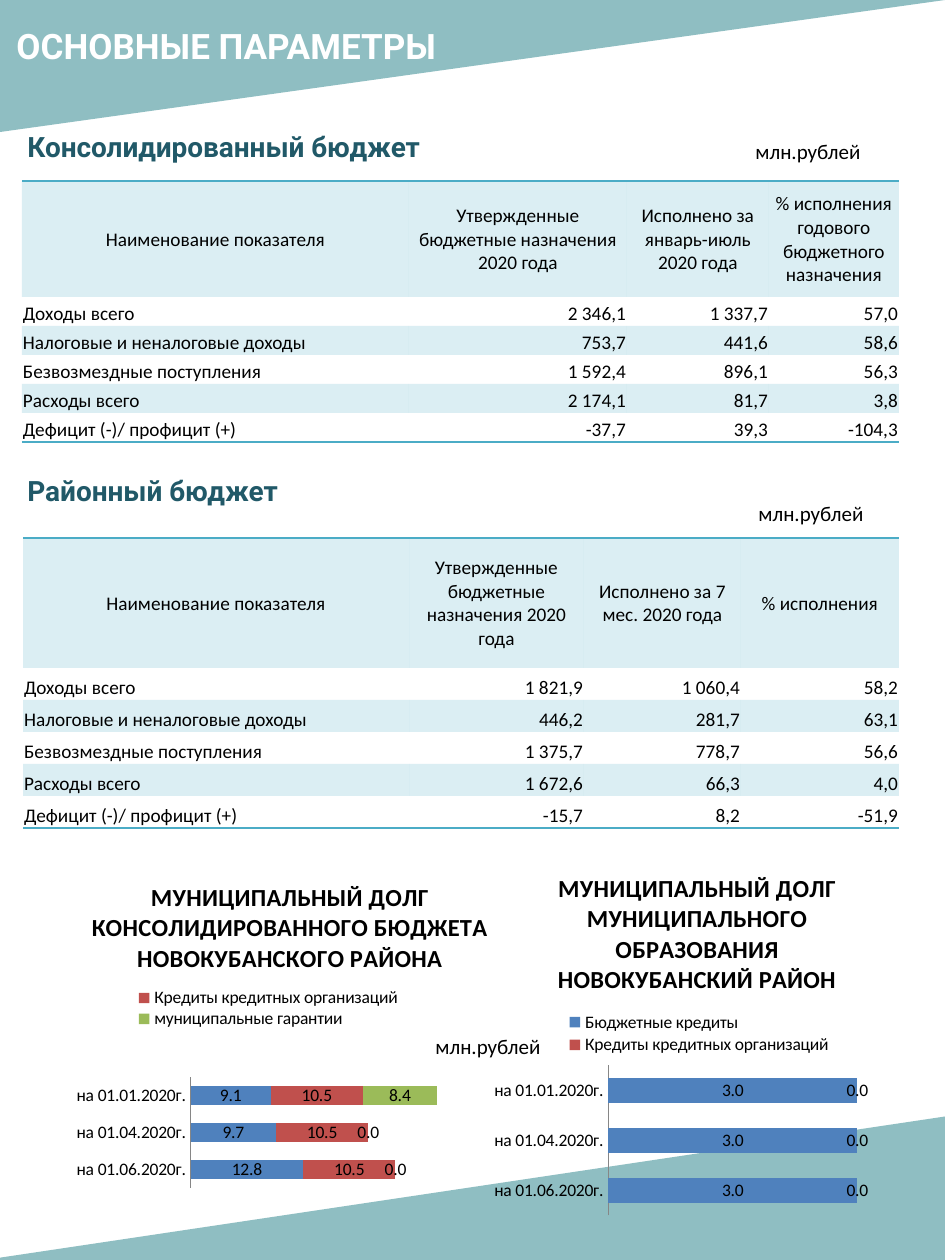
from dataclasses import dataclass

from lxml import etree
from pptx import Presentation, util as u
from pptx.chart.data import CategoryChartData
from pptx.dml.color import RGBColor
from pptx.enum import chart as charts, shapes, text
from pptx.oxml import parse_xml
from pptx.oxml.ns import nsdecls, qn


@dataclass(frozen=True)
class Theme:
    """Colours, fonts and type sizes of the slide."""
    band: str = "519AA0"
    table: str = "4BACC6"
    heading: str = "215968"
    white: str = "FFFFFF"
    black: str = "000000"
    axis: str = "868686"
    series: tuple = ("4F81BD", "C0504D", "9BBB59")
    display: str = "Roboto"
    body: str = "Calibri"
    title_size: int = 20
    heading_size: int = 16
    chart_title_size: int = 14
    unit_size: int = 12
    table_size: int = 11
    chart_size: int = 10


THEME = Theme()
ROW_NAMES = ["Доходы всего", "Налоговые и неналоговые доходы", "Безвозмездные поступления",
             "Расходы всего", "Дефицит (-)/ профицит (+)"]
DATES = ["на 01.01.2020г.", "на 01.04.2020г.", "на 01.06.2020г."]
NUMBER_FORMAT = "#,##0.0"
NO_STYLE = "{2D5ABB26-0587-4C30-8999-92F81FD0307C}"


def px(length):
    """Turn slide pixels into EMU."""
    return u.Emu(round(length * 914400 / 126))


def set_font(font, size, color=THEME.black, name=THEME.body, bold=False):
    """Set the face, size, colour and weight of a font."""
    font.name, font.size, font.bold = name, u.Pt(size), bold
    font.color.rgb = RGBColor.from_string(color)


def fill_clear(fill, color, percent):
    """Fill with a colour at the given opacity."""
    fill.solid()
    fill.fore_color.rgb = RGBColor.from_string(color)


def set_alpha(element, percent):
    """Make the first solid colour inside an element translucent."""
    color = next(element.iter(qn("a:srgbClr")))
    etree.SubElement(color, qn("a:alpha")).set("val", str(percent * 1000))


def add_band(page, box, flip):
    """Add a translucent triangular band."""
    band = page.shapes.add_shape(shapes.MSO_SHAPE.RIGHT_TRIANGLE, *map(px, box))
    band.shadow.inherit = False
    band.rotation = 180
    band.element.spPr.xfrm.set(flip, "1")
    fill_clear(band.fill, THEME.band, 64)
    set_alpha(band.element.spPr, 64)
    band.line.fill.background()


def add_label(page, box, words, size, wrap=True, **style):
    """Add one line of text that sizes its box."""
    label = page.shapes.add_textbox(*map(px, box))
    frame = label.text_frame
    frame.word_wrap = wrap
    frame.auto_size = text.MSO_AUTO_SIZE.SHAPE_TO_FIT_TEXT
    para = frame.paragraphs[0]
    para.text = words
    set_font(para.font, size, **style)


def add_border(cell, side):
    """Draw a one-point rule on one side of a table cell."""
    cell.fill._xPr.insert(0, parse_xml(
        f'<a:{side} {nsdecls("a")} w="12700"><a:solidFill><a:srgbClr val="{THEME.table}"/>'
        f'</a:solidFill></a:{side}>'))


def style_cell(cell, words, row, column, last):
    """Write and format one table cell according to its place."""
    cell.text = words
    cell.margin_left = cell.margin_top = cell.margin_right = px(1)
    cell.margin_bottom = 0
    cell.vertical_anchor = text.MSO_ANCHOR.BOTTOM if row else text.MSO_ANCHOR.MIDDLE
    align = text.PP_ALIGN.CENTER
    if row:
        align = text.PP_ALIGN.RIGHT if column else text.PP_ALIGN.LEFT
    for para in cell.text_frame.paragraphs:
        para.alignment = align
        set_font(para.font, THEME.table_size)
    if row % 2 == 0:
        fill_clear(cell.fill, THEME.table, 20)
        set_alpha(cell.fill._xPr, 20)
    else:
        cell.fill.background()
    if row == 0:
        add_border(cell, "lnT")
    if row == last:
        add_border(cell, "lnB")


def add_budget(page, box, widths, heights, headers, values):
    """Add a budget table with a header row and banded rows."""
    rows = [["Наименование показателя", *headers]]
    rows += [[name, *line] for name, line in zip(ROW_NAMES, values)]
    frame = page.shapes.add_table(len(rows), len(widths), *map(px, box))
    next(frame.element.iter(qn("a:tableStyleId"))).text = NO_STYLE
    table = frame.table
    table.first_row = table.horz_banding = False
    for column, width in zip(table.columns, widths):
        column.width = px(width)
    for i, line in enumerate(rows):
        table.rows[i].height = px(heights[min(i, 1)])
        for j, words in enumerate(line):
            style_cell(table.cell(i, j), words, i, j, len(rows) - 1)


def place_part(part, fractions, inner=False):
    """Place a chart part by fractions of the chart's size."""
    for old in part.findall(qn("c:layout")):
        part.remove(old)
    target = '<c:layoutTarget val="inner"/>' if inner else ""
    modes = '<c:xMode val="edge"/><c:yMode val="edge"/>'
    sizes = "".join(f'<c:{key} val="{value}"/>' for key, value in zip("xywh", fractions))
    layout = parse_xml(f'<c:layout {nsdecls("c")}><c:manualLayout>{target}{modes}{sizes}'
                       '</c:manualLayout></c:layout>')
    overlay = part.find(qn("c:overlay"))
    if overlay is None:
        part.insert(0, layout)
    else:
        overlay.addprevious(layout)


def add_debt(page, box, title, series, maximum, title_at, legend_at, plot_at):
    """Add a stacked bar chart of municipal debt."""
    data = CategoryChartData(number_format=NUMBER_FORMAT)
    data.categories = DATES
    for name, values in series:
        data.add_series(name, values)
    chart = page.shapes.add_chart(charts.XL_CHART_TYPE.BAR_STACKED, *map(px, box), data).chart
    set_font(chart.font, THEME.chart_size)
    chart.has_title = True
    para = chart.chart_title.text_frame.paragraphs[0]
    para.text = title
    set_font(para.font, THEME.chart_title_size, bold=True)
    chart.has_legend = True
    chart.legend.position = charts.XL_LEGEND_POSITION.TOP
    chart.legend.include_in_layout = False
    axis = chart.category_axis
    axis.reverse_order = True
    axis.major_tick_mark = charts.XL_TICK_MARK.NONE
    axis.format.line.color.rgb = RGBColor.from_string(THEME.axis)
    scale = chart.value_axis
    scale.visible = scale.has_major_gridlines = False
    scale.minimum_scale, scale.maximum_scale = 0, maximum
    plot = chart.plots[0]
    plot.gap_width, plot.overlap, plot.vary_by_categories = 95, 100, False
    for bars, color in zip(plot.series, THEME.series):
        bars.format.fill.solid()
        bars.format.fill.fore_color.rgb = RGBColor.from_string(color)
        labels = bars.data_labels
        labels.show_value = True
        labels.number_format, labels.number_format_is_linked = NUMBER_FORMAT, False
        set_font(labels.font, THEME.chart_size)
    root = chart.element
    legend = next(root.iter(qn("c:legend")))
    for index in range(2, len(series)):
        legend.find(qn("c:legendPos")).addnext(parse_xml(
            f'<c:legendEntry {nsdecls("c")}><c:idx val="{index}"/><c:delete val="1"/></c:legendEntry>'))
    place_part(next(root.iter(qn("c:title"))), title_at)
    place_part(legend, legend_at)
    place_part(next(root.iter(qn("c:plotArea"))), plot_at, inner=True)


def main():
    """Build the slide and save it."""
    deck = Presentation()
    deck.slide_width, deck.slide_height = px(945), px(1260)
    page = deck.slides.add_slide(deck.slide_layouts[6])
    add_band(page, (0, 0, 945, 132), "flipH")
    add_band(page, (-16, 1116, 964, 144), "flipV")
    add_label(page, (4, 18, 614, 55), "ОСНОВНЫЕ ПАРАМЕТРЫ", THEME.title_size,
              color=THEME.white, name=THEME.display, bold=True)
    for top, words in ((123, "Консолидированный бюджет"), (467, "Районный бюджет")):
        add_label(page, (15, top, 614, 47), words, THEME.heading_size,
                  color=THEME.heading, name=THEME.display, bold=True)
    add_budget(page, (22, 181, 877, 261), (387, 218, 142, 130), (116, 29),
               ["Утвержденные бюджетные назначения\n2020 года", "Исполнено за январь-июль\n2020 года",
                "% исполнения годового бюджетного назначения"],
               [("2 346,1", "1 337,7", "57,0"), ("753,7", "441,6", "58,6"),
                ("1 592,4", "896,1", "56,3"), ("2 174,1", "81,7", "3,8"), ("-37,7", "39,3", "-104,3")])
    add_budget(page, (23, 538, 876, 290), (386, 175, 157, 158), (130, 32),
               ["Утвержденные бюджетные назначения 2020 года", "Исполнено за 7\nмес. 2020 года",
                "% исполнения"],
               [("1 821,9", "1 060,4", "58,2"), ("446,2", "281,7", "63,1"),
                ("1 375,7", "778,7", "56,6"), ("1 672,6", "66,3", "4,0"), ("-15,7", "8,2", "-51,9")])
    for left, top in ((743, 132), (746, 494), (423, 1027)):
        add_label(page, (left, top, 135, 38), "млн.рублей", THEME.unit_size, wrap=False)
    budget, bank = "Бюджетные кредиты", "Кредиты кредитных организаций"
    add_debt(page, (15, 847, 517, 359),
             "МУНИЦИПАЛЬНЫЙ ДОЛГ КОНСОЛИДИРОВАННОГО БЮДЖЕТА НОВОКУБАНСКОГО РАЙОНА",
             [(budget, (9.1, 9.7, 12.8)), (bank, (10.5, 10.5, 10.5)),
              ("муниципальные гарантии", (8.4, 0, 0))],
             30, (0.14, 0.08), (0.22, 0.39, 0.54, 0.12), (0.34, 0.64, 0.51, 0.31))
    add_debt(page, (486, 848, 422, 375),
             "МУНИЦИПАЛЬНЫЙ ДОЛГ МУНИЦИПАЛЬНОГО ОБРАЗОВАНИЯ НОВОКУБАНСКИЙ РАЙОН",
             [(budget, (3, 3, 3)), (bank, (0, 0, 0))],
             3, (0.16, 0.05), (0.18, 0.43, 0.65, 0.13), (0.29, 0.58, 0.59, 0.4))
    deck.save("out.pptx")


if __name__ == "__main__":
    main()
